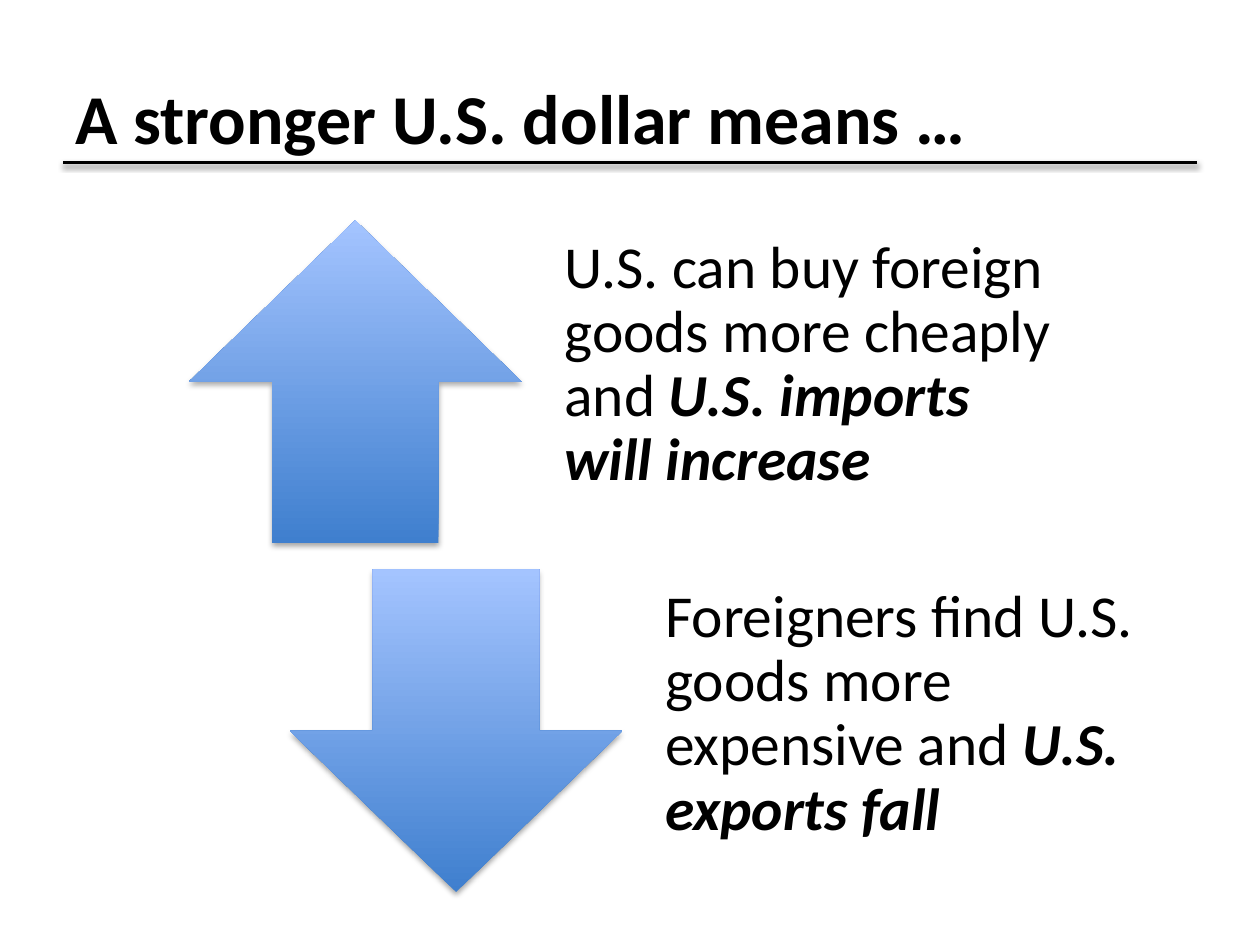
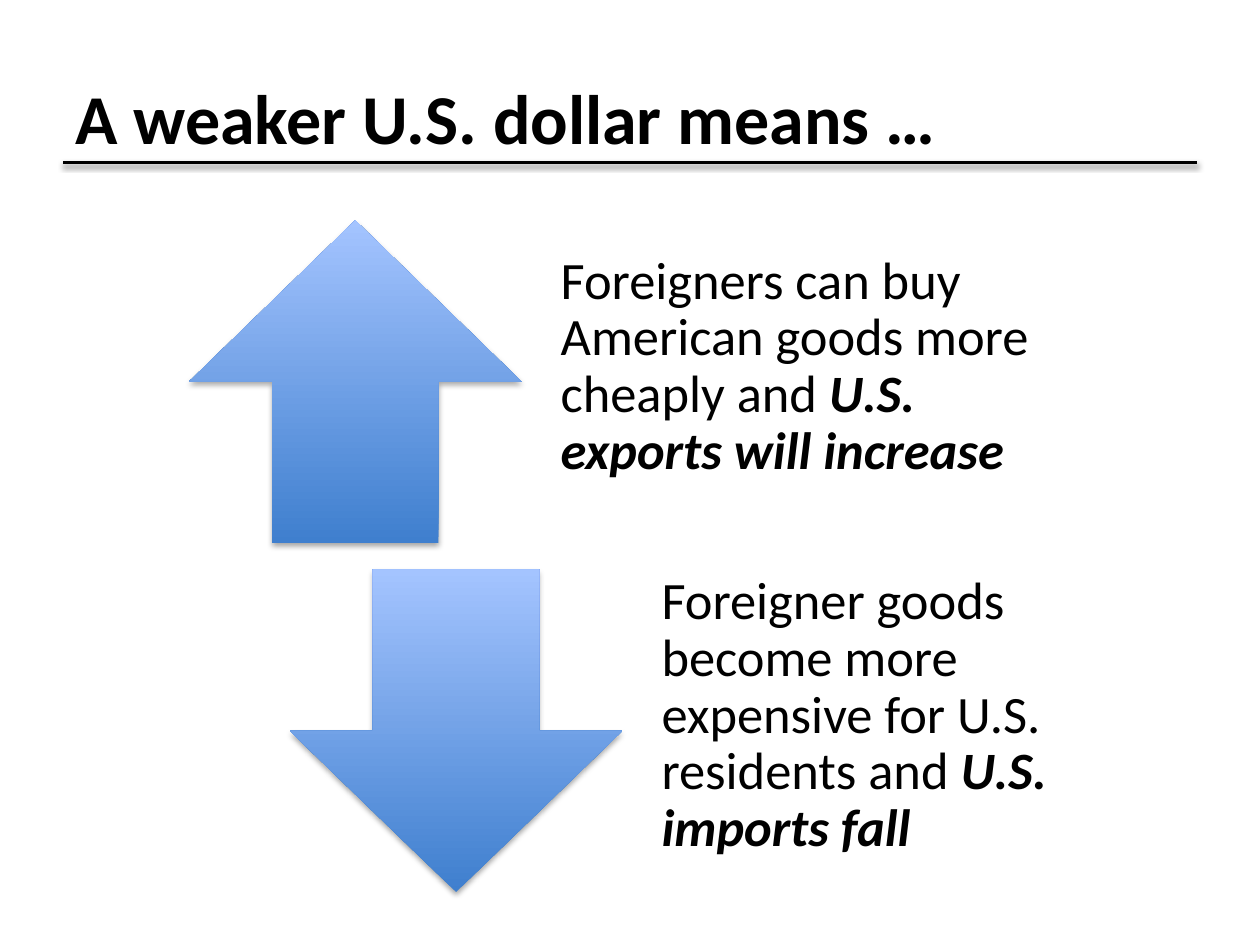
from dataclasses import dataclass

from lxml.etree import SubElement
from pptx import Presentation
from pptx.dml.color import RGBColor
from pptx.enum.shapes import MSO_CONNECTOR as Connector, MSO_SHAPE as Shape
from pptx.enum.text import MSO_ANCHOR as Anchor
from pptx.oxml.ns import qn
from pptx.util import Inches, Pt


@dataclass(frozen=True)
class Theme:
    font: str = "Calibri"
    ink: str = "000000"
    arrow_bottom: str = "3F7FCE"
    arrow_top: str = "A4C4FF"
    title_size: int = 40
    rule_width: int = 2
    shadow_blur: float = 3.1
    rule_shadow: tuple = (38, 1.6)  # opacity in percent, distance in points
    arrow_shadow: tuple = (35, 1.8)


# Layout in inches
MARGIN, CONTENT_WIDTH, RULE_TOP = 0.5, 9, 1.29
ARROW_LEFT, ARROW_TOP, ARROW_WIDTH, ROW_HEIGHT = 1.5, 1.75, 2.64, 2.56
ROW_SHIFT, ROW_PITCH = 0.8, 2.77
EFFECT_OFFSET, EFFECT_WIDTH = 2.72, 4.48

# Title, effect text size, effect inset, (plain, emphasized) effect per arrow
SLIDES = [
    ("A stronger U.S. dollar means …", 34, 0.26, [
        ("U.S. can buy foreign goods more cheaply and ", "U.S. imports will increase"),
        ("Foreigners find U.S. goods more expensive and ", "U.S. exports fall"),
    ]),
    ("A weaker U.S. dollar means …", 30, 0.23, [
        ("Foreigners can buy American goods more cheaply and ", "U.S. exports will increase"),
        ("Foreigner goods become more expensive for U.S. residents and ", "U.S. imports fall"),
    ]),
]
ARROWS = [Shape.UP_ARROW, Shape.DOWN_ARROW]


class SlideBuilder:
    def __init__(self, deck, theme):
        self.deck, self.theme, self.page = deck, theme, None

    def new_page(self):
        self.page = self.deck.slides.add_slide(self.deck.slide_layouts[6])

    def shadow(self, item, opacity, distance):
        """Drop a soft shadow straight down."""
        effects = SubElement(item._element.spPr, qn("a:effectLst"))
        outer = SubElement(effects, qn("a:outerShdw"), rotWithShape="0",
                           blurRad=str(Pt(self.theme.shadow_blur)),
                           dist=str(Pt(distance)), dir=str(90 * 60000))
        color = SubElement(outer, qn("a:srgbClr"), val=self.theme.ink)
        SubElement(color, qn("a:alpha"), val=str(opacity * 1000))

    def rule(self):
        line = self.page.shapes.add_connector(
            Connector.STRAIGHT, Inches(MARGIN), Inches(RULE_TOP),
            Inches(MARGIN + CONTENT_WIDTH), Inches(RULE_TOP))
        line.line.color.rgb = RGBColor.from_string(self.theme.ink)
        line.line.width = Pt(self.theme.rule_width)
        self.shadow(line, *self.theme.rule_shadow)

    def text(self, left, top, width, height, size):
        """Add a middle-anchored text box; return its frame and paragraph."""
        box = self.page.shapes.add_textbox(
            Inches(left), Inches(top), Inches(width), Inches(height))
        frame = box.text_frame
        frame.word_wrap = True
        frame.vertical_anchor = Anchor.MIDDLE
        para = frame.paragraphs[0]
        para.font.name = self.theme.font
        para.font.size = Pt(size)
        para.font.color.rgb = RGBColor.from_string(self.theme.ink)
        return frame, para

    def title(self, wording):
        _, para = self.text(MARGIN, 0.3, CONTENT_WIDTH, 1.25, self.theme.title_size)
        para.font.bold = True
        para.add_run().text = wording

    def arrow(self, kind, left, top):
        arrow = self.page.shapes.add_shape(
            kind, Inches(left), Inches(top), Inches(ARROW_WIDTH), Inches(ROW_HEIGHT))
        arrow.fill.gradient()
        arrow.fill.gradient_angle = 90
        colors = (self.theme.arrow_bottom, self.theme.arrow_top)
        for stop, position, color in zip(arrow.fill.gradient_stops, (0, 1), colors):
            stop.position = position
            stop.color.rgb = RGBColor.from_string(color)
        arrow.line.fill.background()
        self.shadow(arrow, *self.theme.arrow_shadow)

    def effect(self, left, top, size, inset, plain, emphasized):
        frame, para = self.text(left, top, EFFECT_WIDTH, ROW_HEIGHT, size)
        frame.margin_left = frame.margin_right = frame.margin_bottom = Inches(inset)
        frame.margin_top = 0
        para.line_spacing = 0.9
        para.add_run().text = plain
        span = para.add_run()
        span.text = emphasized
        span.font.bold = span.font.italic = True


def main():
    deck = Presentation()
    deck.slide_width, deck.slide_height = Inches(10), Inches(7.5)
    builder = SlideBuilder(deck, Theme())

    for title, size, inset, effects in SLIDES:
        builder.new_page()
        builder.rule()
        builder.title(title)
        # Each row steps down and to the right
        for row, (kind, effect) in enumerate(zip(ARROWS, effects)):
            left = ARROW_LEFT + row * ROW_SHIFT
            top = ARROW_TOP + row * ROW_PITCH
            builder.arrow(kind, left, top)
            builder.effect(left + EFFECT_OFFSET, top, size, inset, *effect)

    deck.save("out.pptx")


if __name__ == "__main__":
    main()
